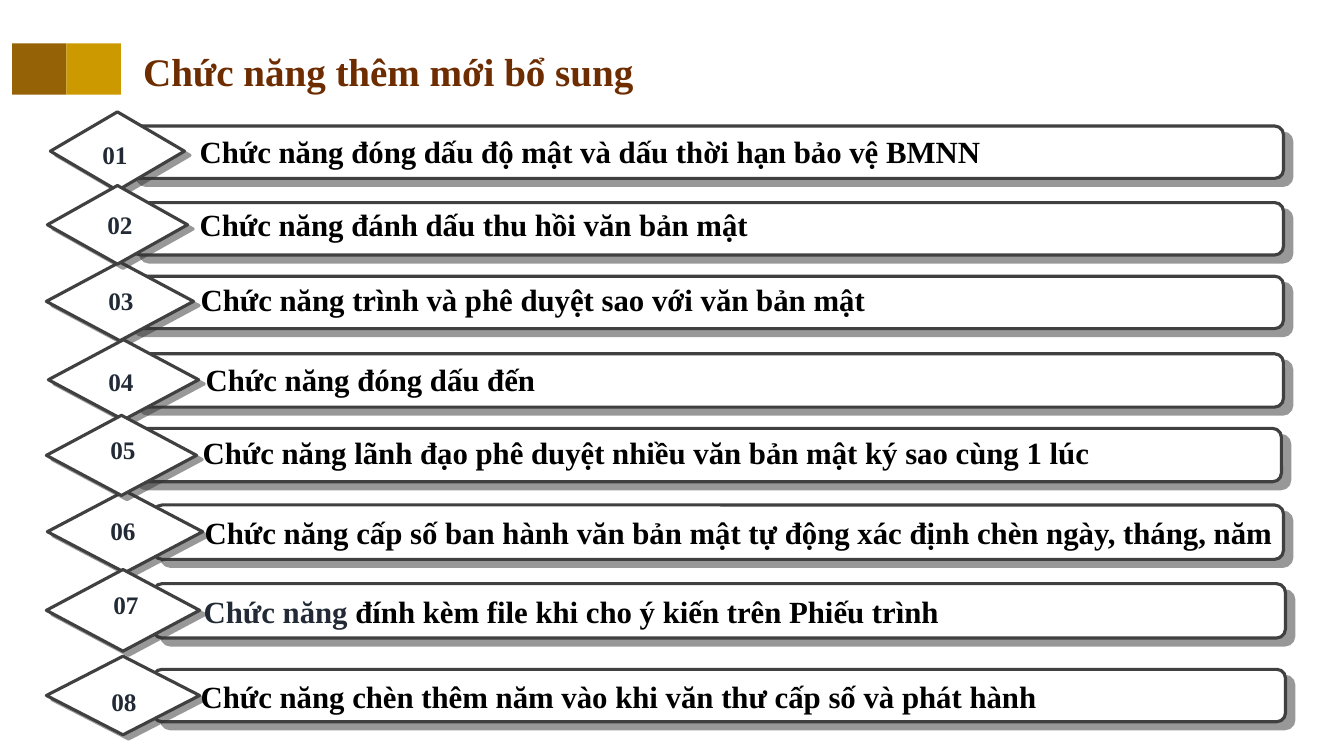
from pptx import Presentation
from pptx.util import Inches, Pt
from pptx.dml.color import RGBColor
from pptx.enum.shapes import MSO_SHAPE as Shape
from pptx.enum.text import PP_ALIGN as Align, MSO_ANCHOR as Anchor
from pptx.oxml import parse_xml
from pptx.oxml.ns import nsdecls

TITLE = "Chức năng thêm mới bổ sung"
# Row texts: (dark lead-in, black text)
TEXTS = [
    ("", "Chức năng đóng dấu độ mật và dấu thời hạn bảo vệ BMNN"),
    ("", "Chức năng đánh dấu thu hồi văn bản mật"),
    ("", "Chức năng trình và phê duyệt sao với văn bản mật"),
    ("", "Chức năng đóng dấu đến"),
    ("", "Chức năng lãnh đạo phê duyệt nhiều văn bản mật ký sao cùng 1 lúc"),
    ("", "Chức năng cấp số ban hành văn bản mật tự động xác định chèn ngày, tháng, năm"),
    ("Chức năng ", "đính kèm file khi cho ý kiến trên Phiếu trình"),
    ("", "Chức năng chèn thêm năm vào khi văn thư cấp số và phát hành"),
]
# Bar: left, top, right, height; diamond: left, top, width;
# number: centre x, centre y; label: left, top
PLACES = [
    ((1.28, 1.25, 12.73, 0.52), (0.50, 1.11, 1.33), (1.14, 1.53), (1.85, 1.19)),
    ((1.31, 2.01, 12.73, 0.52), (0.47, 1.84, 1.39), (1.19, 2.23), (1.85, 1.91)),
    ((1.25, 2.74, 12.73, 0.52), (0.46, 2.60, 1.46), (1.20, 2.98), (1.86, 2.66)),
    ((1.30, 3.51, 12.73, 0.53), (0.48, 3.37, 1.49), (1.20, 3.78), (1.91, 3.45)),
    ((1.28, 4.25, 12.71, 0.53), (0.46, 4.12, 1.49), (1.22, 4.46), (1.88, 4.17)),
    ((1.52, 5.01, 12.73, 0.54), (0.47, 4.87, 1.54), (1.22, 5.26), (1.90, 4.97)),
    ((1.52, 5.79, 12.75, 0.54), (0.46, 5.65, 1.52), (1.25, 6.00), (1.89, 5.75)),
    ((1.52, 6.64, 12.75, 0.52), (0.46, 6.51, 1.52), (1.23, 6.96), (1.86, 6.59)),
]
ORDER = (1, 3, 4, 6, 7, 8, 2, 5)  # back to front, as the diamonds overlap

FONT = "Times New Roman"
WHITE = RGBColor(0xFF, 0xFF, 0xFF)
BLACK = RGBColor(0, 0, 0)
GREY = RGBColor(0x40, 0x40, 0x40)
NAVY = RGBColor(0x22, 0x2A, 0x35)
RUST = RGBColor(0x6E, 0x2D, 0x01)
BROWN = RGBColor(0x95, 0x62, 0x05)
GOLD = RGBColor(0xCC, 0x99, 0x00)

prs = Presentation()
prs.slide_width, prs.slide_height = Inches(13.33), Inches(7.5)
slide = prs.slides.add_slide(prs.slide_layouts[5])


def style(item, size, color=None):
    item.font.name, item.font.size, item.font.bold = FONT, Pt(size), True
    if color is not None:
        item.font.color.rgb = color


def add_shape(kind, box, fill):
    shape = slide.shapes.add_shape(kind, *map(Inches, box))
    shape.shadow.inherit = False
    shape.fill.solid()
    shape.fill.fore_color.rgb = fill
    shape.line.fill.background()
    return shape


def add_panel(kind, box, dist, angle):
    """White outlined shape with a hard offset shadow."""
    shape = add_shape(kind, box, WHITE)
    shape.line.color.rgb, shape.line.width = GREY, Pt(2.25)
    effects = shape._element.spPr.find(
        "{http://schemas.openxmlformats.org/drawingml/2006/main}effectLst")
    effects.append(parse_xml(
        f'<a:outerShdw {nsdecls("a")} blurRad="0" dist="{Pt(dist)}" '
        f'dir="{angle * 60000}" algn="tl" rotWithShape="0">'
        '<a:srgbClr val="333333"><a:alpha val="50000"/></a:srgbClr>'
        '</a:outerShdw>'))


def add_text(box):
    frame = slide.shapes.add_textbox(*map(Inches, box)).text_frame
    frame.word_wrap = True
    frame.margin_left = frame.margin_right = Inches(0.13)
    frame.margin_top = frame.margin_bottom = Inches(0.13)
    return frame


# Title and its two colour blocks
title = slide.shapes.title
title.left, title.top = Inches(1.32), Inches(0.42)
title.width, title.height = Inches(5.12), Inches(0.57)
title.text_frame.text = TITLE
title.text_frame.word_wrap = False
title.text_frame.vertical_anchor = Anchor.TOP
head = title.text_frame.paragraphs[0]
head.alignment = Align.LEFT
style(head, 27.9, RUST)
for i, color in enumerate((BROWN, GOLD)):
    add_shape(Shape.RECTANGLE, (0.12 + 0.54 * i, 0.43, 0.54, 0.51), color)

# Numbered rows
for num in ORDER:
    bar, gem, mid, label = PLACES[num - 1]
    left, top, right, high = bar
    add_panel(Shape.ROUNDED_RECTANGLE, (left, top, right - left, high), 7.8, 40)
    add_panel(Shape.DIAMOND, (*gem, high * 1.5), 5, 37)

    frame = add_text((mid[0] - 0.65, mid[1] - 0.46, 1.3, 0.92))
    frame.vertical_anchor = Anchor.MIDDLE
    para = frame.paragraphs[0]
    para.text, para.alignment = f"{num:02}", Align.CENTER
    style(para, 18, NAVY)

    para = add_text((*label, 10.96, 0.5)).paragraphs[0]
    style(para, 22)
    for words, color in zip(TEXTS[num - 1], (NAVY, BLACK)):
        if words:
            run = para.add_run()
            run.text = words
            run.font.color.rgb = color

prs.save("out.pptx")
